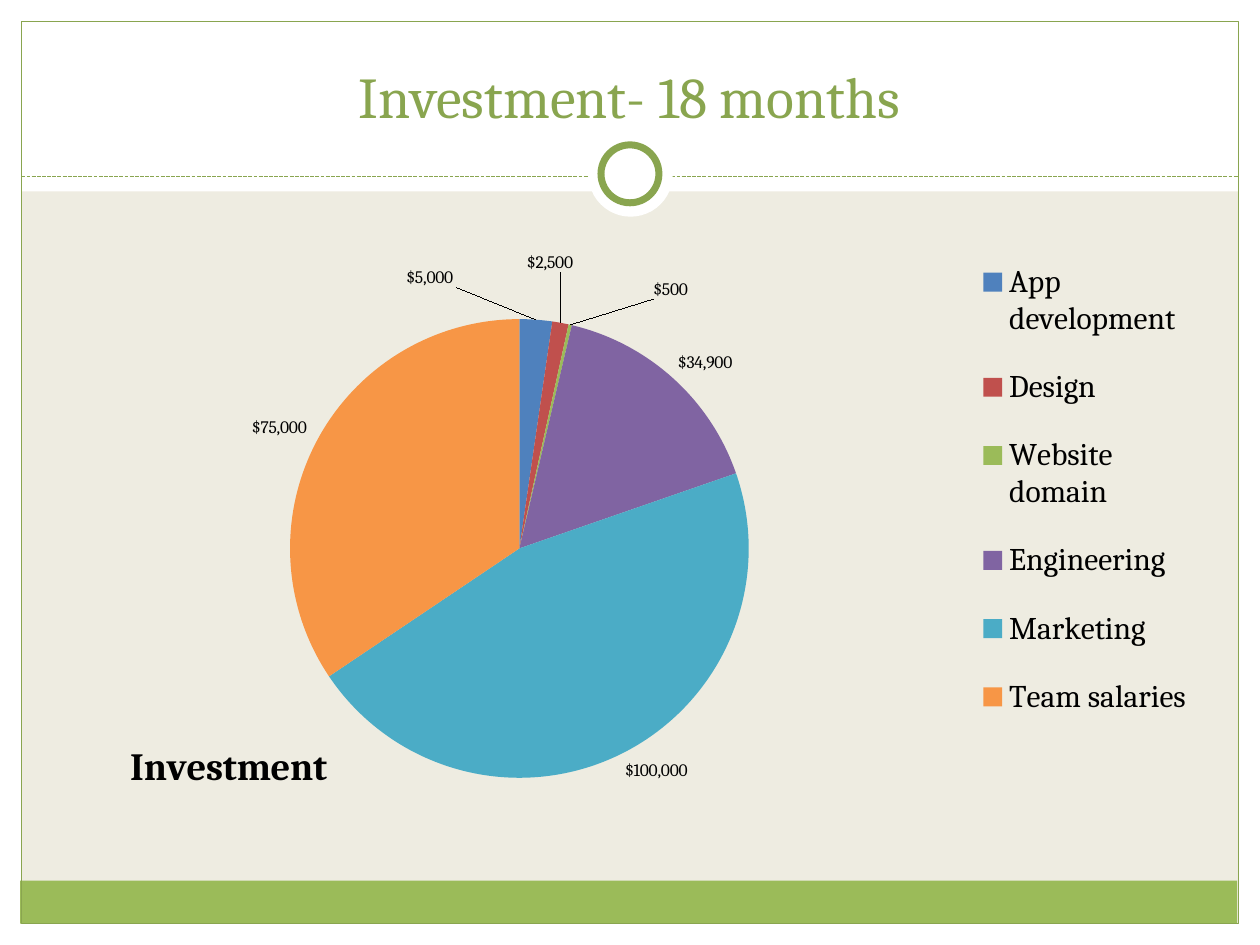
import pptx
import pptx.chart.data
import pptx.dml.color
import pptx.enum.chart
import pptx.enum.dml
import pptx.enum.shapes
import pptx.enum.text
import pptx.oxml
import pptx.oxml.ns
import pptx.util

Inches = pptx.util.Inches
Pt = pptx.util.Pt
RGBColor = pptx.dml.color.RGBColor
SHAPE = pptx.enum.shapes.MSO_SHAPE
qn = pptx.oxml.ns.qn

WHITE = RGBColor(0xFF, 0xFF, 0xFF)
BLACK = RGBColor(0, 0, 0)
CREAM = RGBColor(0xEE, 0xEC, 0xE1)
GREEN = RGBColor(0x9B, 0xBB, 0x59)
OLIVE = RGBColor(0x89, 0xA5, 0x4F)
BLUE = RGBColor(0x4F, 0x81, 0xBD)
RED = RGBColor(0xC0, 0x50, 0x4D)
PURPLE = RGBColor(0x80, 0x64, 0xA2)
TEAL = RGBColor(0x4B, 0xAC, 0xC6)
ORANGE = RGBColor(0xF7, 0x96, 0x46)

DOLLARS = r'"$"#,##0_);[Red]\("$"#,##0\)'
COSTS = [
    ("App development", 5000, BLUE),
    ("Design", 2500, RED),
    ("Website domain", 500, GREEN),
    ("Engineering", 34900, PURPLE),
    ("Marketing", 100000, TEAL),
    ("Team salaries", 75000, ORANGE),
]
# Shifts of the crowded labels, as fractions of the chart size
LABEL_SHIFTS = [(-0.09, -0.04), (-0.03, -0.07), (0.07, -0.03)]


def write_text(frame, text, *, size, color, font, bold=False, align=None):
    paragraph = frame.paragraphs[0]
    paragraph.alignment = align
    run = paragraph.add_run()
    run.text = text
    run.font.size = Pt(size)
    run.font.name = font
    run.font.bold = bold
    run.font.color.rgb = color


def manual_layout(x, y, w=None, h=None, edge=True, inner=False):
    """Return a c:layout; without edge, x and y are shifts from the default place."""
    parts = []
    if inner:
        parts.append('<c:layoutTarget val="inner"/>')
    if edge:
        parts.append('<c:xMode val="edge"/><c:yMode val="edge"/>')
    for tag, value in (("x", x), ("y", y), ("w", w), ("h", h)):
        if value is not None:
            parts.append(f'<c:{tag} val="{value}"/>')
    return pptx.oxml.parse_xml(
        f'<c:layout {pptx.oxml.ns.nsdecls("c")}><c:manualLayout>'
        f'{"".join(parts)}</c:manualLayout></c:layout>')


def set_layout(parent, layout, after=None):
    """Replace the layout of a chart part, placing it after the named child."""
    for old in parent.findall(qn("c:layout")):
        parent.remove(old)
    previous = parent.find(qn(after)) if after else None
    if previous is None:
        parent.insert(0, layout)
    else:
        previous.addnext(layout)


class Deck:
    font = "Cambria"

    def __init__(self):
        self.presentation = pptx.Presentation()
        self.presentation.slide_width = Inches(10)
        self.presentation.slide_height = Inches(7.5)
        self.slide = self.presentation.slides.add_slide(
            self.presentation.slide_layouts[6])
        fill = self.slide.background.fill
        fill.solid()
        fill.fore_color.rgb = CREAM

    def shape(self, kind, box, fill=None, line=None, width=0.75):
        shape = self.slide.shapes.add_shape(kind, *map(Inches, box))
        shape.shadow.inherit = False
        if fill is None:
            shape.fill.background()
        else:
            shape.fill.solid()
            shape.fill.fore_color.rgb = fill
        if line is None:
            shape.line.fill.background()
        else:
            shape.line.color.rgb = line
            shape.line.width = Pt(width)

    def dashed_rule(self, left, right, y):
        rule = self.slide.shapes.add_connector(
            pptx.enum.shapes.MSO_CONNECTOR.STRAIGHT,
            Inches(left), Inches(y), Inches(right), Inches(y))
        rule.line.color.rgb = OLIVE
        rule.line.width = Pt(0.75)
        rule.line.dash_style = pptx.enum.dml.MSO_LINE.SQUARE_DOT
        properties = rule.element.find(qn("p:spPr"))
        properties.append(pptx.oxml.parse_xml(
            f'<a:effectLst {pptx.oxml.ns.nsdecls("a")}/>'))

    def heading(self, text, box):
        frame = self.slide.shapes.add_textbox(*map(Inches, box)).text_frame
        frame.word_wrap = True
        frame.vertical_anchor = pptx.enum.text.MSO_ANCHOR.BOTTOM
        write_text(frame, text, size=33, color=OLIVE, font=self.font,
                   align=pptx.enum.text.PP_ALIGN.CENTER)

    def pie(self, title, costs, box):
        data = pptx.chart.data.CategoryChartData(number_format=DOLLARS)
        data.categories = [name for name, _, _ in costs]
        data.add_series("Series 1", [amount for _, amount, _ in costs])
        chart = self.slide.shapes.add_chart(
            pptx.enum.chart.XL_CHART_TYPE.PIE, *map(Inches, box), data).chart
        chart.font.name = self.font
        chart.font.size = Pt(10)
        chart.font.color.rgb = BLACK

        write_text(chart.chart_title.text_frame, title, size=22, color=BLACK,
                   font=self.font, bold=True)
        chart.chart_title.include_in_layout = True
        title_part = chart.element.find(".//" + qn("c:title"))
        set_layout(title_part, manual_layout(0.07, 0.88), after="c:tx")

        chart.has_legend = True
        legend = chart.legend
        legend.position = pptx.enum.chart.XL_LEGEND_POSITION.RIGHT
        legend.include_in_layout = False
        legend.font.size = Pt(18)
        legend.font.name = self.font
        legend.font.color.rgb = BLACK
        legend_part = chart.element.find(".//" + qn("c:legend"))
        set_layout(legend_part, manual_layout(0.8, 0.07, 0.19, 0.83),
                   after="c:legendPos")

        plot_area = chart.element.find(".//" + qn("c:plotArea"))
        set_layout(plot_area, manual_layout(0.21, 0.21, 0.4, 0.74, inner=True))
        self.pie_slices(chart.plots[0], costs)

    def pie_slices(self, plot, costs):
        plot.vary_by_categories = True
        series = plot.series[0]
        for index, (_, _, color) in enumerate(costs):
            fill = series.points[index].format.fill
            fill.solid()
            fill.fore_color.rgb = color

        outside = pptx.enum.chart.XL_LABEL_POSITION.OUTSIDE_END
        labels = series.data_labels
        labels.show_value = True
        labels.show_percentage = False
        labels.number_format = DOLLARS
        labels.number_format_is_linked = False
        labels.position = outside
        for index in range(len(LABEL_SHIFTS)):
            series.points[index].data_label.position = outside
        label_parts = plot.series[0].points[0].data_label and series.data_labels
        shifted = plot.chart.element.iter(qn("c:dLbl")) if label_parts else ()
        for label, (x, y) in zip(shifted, LABEL_SHIFTS):
            set_layout(label, manual_layout(x, y, edge=False), after="c:idx")


def main():
    deck = Deck()
    for margin in ((0, 7.33, 10, 0.17), (0, 0, 10, 1.52),
                   (0, 0, 0.17, 7.5), (9.83, 0, 0.17, 7.5)):
        deck.shape(SHAPE.RECTANGLE, margin, fill=WHITE)
    deck.shape(SHAPE.RECTANGLE, (0.16, 6.99, 9.66, 0.34), fill=GREEN)
    deck.shape(SHAPE.RECTANGLE, (0.17, 0.17, 9.66, 7.16), line=OLIVE)
    deck.dashed_rule(0.17, 9.83, 1.4)
    deck.shape(SHAPE.OVAL, (4.67, 1.05, 0.67, 0.67), fill=WHITE)
    deck.shape(SHAPE.OVAL, (4.77, 1.15, 0.46, 0.46), fill=WHITE, line=OLIVE, width=4)
    deck.heading("Investment- 18 months", (0.33, 0.25, 9.33, 0.83))
    deck.pie("Investment", COSTS, (0.33, 1.5, 9.25, 4.92))
    deck.presentation.save("out.pptx")


if __name__ == "__main__":
    main()
